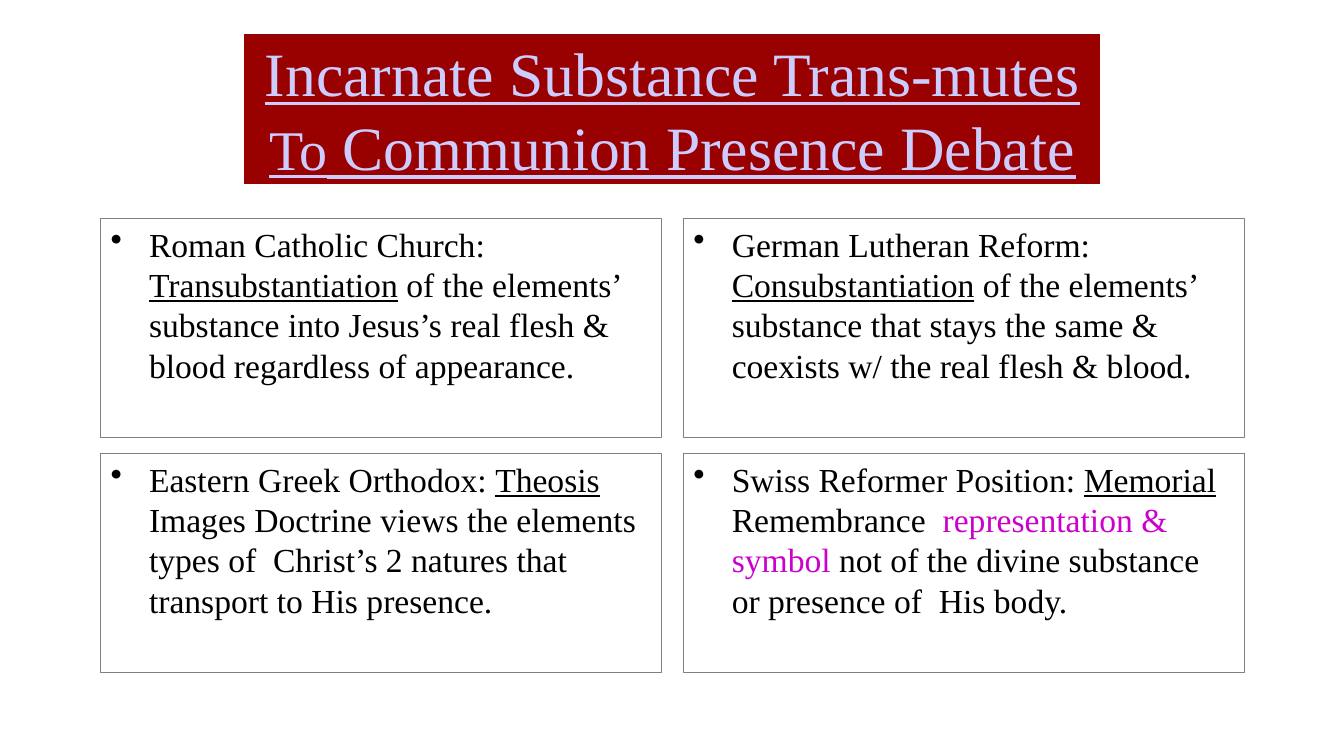
from lxml.etree import SubElement
from pptx import Presentation
from pptx.dml.color import RGBColor
from pptx.enum.text import MSO_ANCHOR as Anchor, PP_ALIGN as Align
from pptx.oxml.ns import qn
from pptx.util import Inches, Pt

BASE = {"name": "Times New Roman", "size": 24, "color": "000000"}
LINK = {"underline": True}
PINK = {"color": "CC00CC"}
HEAD = {"size": 44, "color": "CCCCFF", "underline": True}

TITLE = [
    ("Incarnate Substance Trans-mutes ", HEAD),
    ("To", HEAD | {"size": 40}),
    (" Communion Presence Debate", HEAD),
]
VIEWS = [
    [("Roman Catholic Church: ", {}), ("Transubstantiation", LINK),
     (" of the elements’ substance into Jesus’s real flesh & blood "
      "regardless of appearance.", {})],
    [("German Lutheran Reform: ", {}), ("Consubstantiation", LINK),
     (" of the elements’ substance that stays the same & coexists w/ "
      "the real flesh & blood.", {})],
    [("Eastern Greek Orthodox: ", {}), ("Theosis", LINK),
     (" Images Doctrine views the elements types of  Christ’s 2 natures "
      "that transport to His presence.", {})],
    [("Swiss Reformer Position: ", {}), ("Memorial", LINK),
     ("  Remembrance  ", {}), ("representation & symbol", PINK),
     (" not of the divine substance or presence of  His body.", {})],
]

LEFT, TOP, WIDTH, HEIGHT = 1, 2.17, 5.56, 2.17
STEP_X, STEP_Y = 5.78, 2.33
INDENT = Inches(0.38)


def paint(target, color):
    target.rgb = RGBColor.from_string(color)


def add_box(slide, place, runs, edge):
    """Add an outlined text box and return its shape and paragraph."""
    box = slide.shapes.add_textbox(*map(Inches, place))
    box.line.width = Pt(0.75)
    paint(box.line.color, edge)
    box.text_frame.word_wrap = True
    para = box.text_frame.paragraphs[0]
    for text, style in runs:
        run = para.add_run()
        run.text = text
        for key, value in (BASE | style).items():
            if key == "color":
                paint(run.font.color, value)
            else:
                setattr(run.font, key, Pt(value) if key == "size" else value)
    return box, para


def add_bullet(para):
    props = para._p.get_or_add_pPr()
    props.set("marL", str(INDENT))
    props.set("indent", str(-INDENT))
    SubElement(props, qn("a:buChar"), char="•")


deck = Presentation()
deck.slide_width, deck.slide_height = Inches(13.33), Inches(7.5)
slide = deck.slides.add_slide(deck.slide_layouts[6])

box, para = add_box(slide, (2.42, 0.33, 8.5, 1.5), TITLE, "FFFFFF")
box.fill.solid()
paint(box.fill.fore_color, "990000")
box.text_frame.vertical_anchor = Anchor.MIDDLE
para.alignment = Align.CENTER

for i, view in enumerate(VIEWS):
    row, col = divmod(i, 2)
    place = (LEFT + col * STEP_X, TOP + row * STEP_Y, WIDTH, HEIGHT)
    box, para = add_box(slide, place, view, "808080")
    add_bullet(para)

deck.save("out.pptx")
